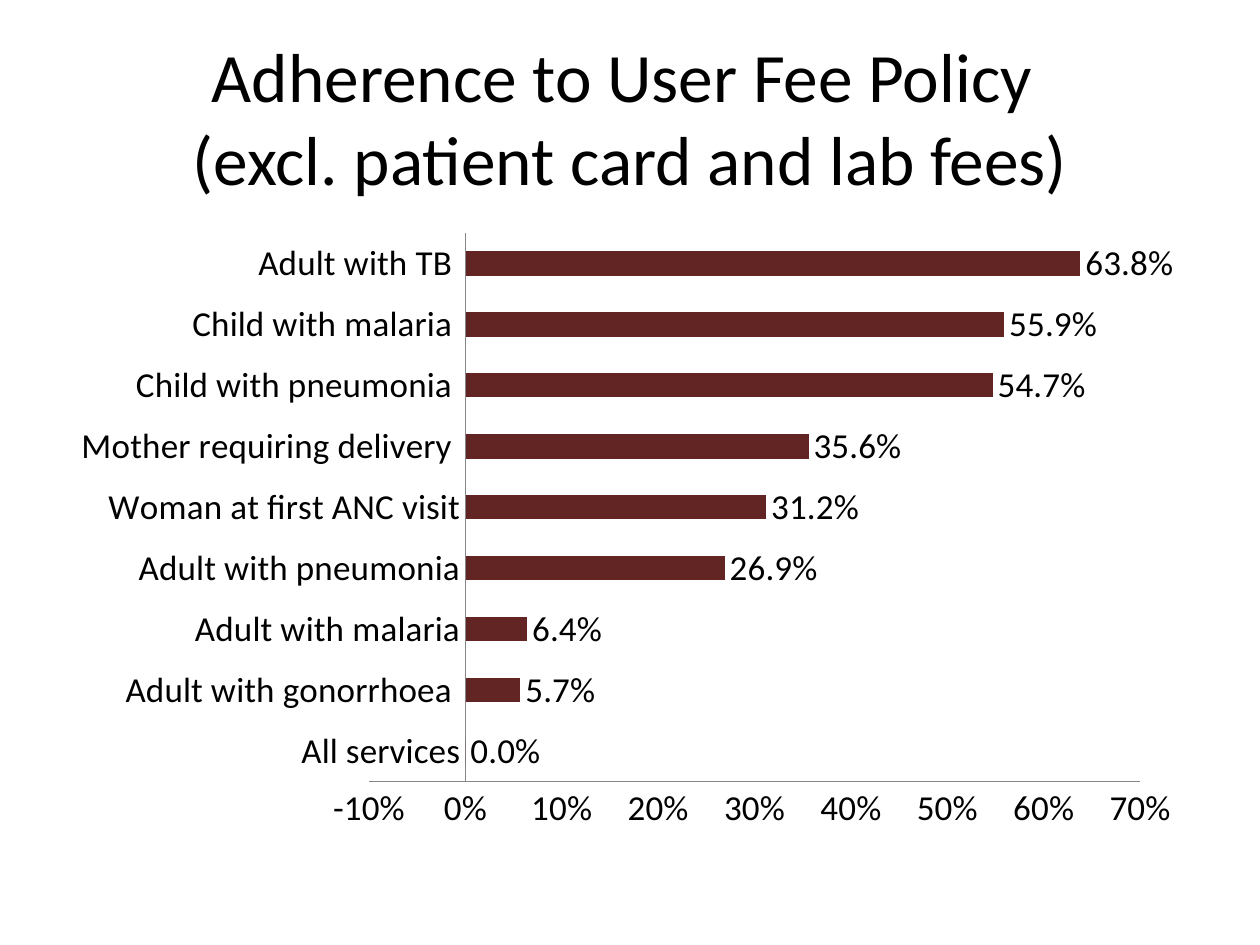
from lxml import etree
from pptx import Presentation
from pptx.chart.data import CategoryChartData
from pptx.dml.color import RGBColor
from pptx.enum.chart import XL_CHART_TYPE as Kind, XL_LABEL_POSITION as Spot
from pptx.enum.chart import XL_TICK_MARK as Tick
from pptx.enum.text import MSO_ANCHOR, MSO_AUTO_SIZE, PP_ALIGN
from pptx.oxml.ns import qn
from pptx.util import Inches, Pt

BLACK = RGBColor(0, 0, 0)
GRAY = RGBColor(0x86, 0x86, 0x86)
MAROON = RGBColor(0x63, 0x25, 0x23)
FACE = "Calibri"

RATES = [
    ("All services", 0),
    ("Adult with gonorrhoea ", 0.057),
    ("Adult with malaria", 0.064),
    ("Adult with pneumonia", 0.269),
    ("Woman at first ANC visit", 0.312),
    ("Mother requiring delivery ", 0.356),
    ("Child with pneumonia ", 0.547),
    ("Child with malaria ", 0.559),
    ("Adult with TB ", 0.638),
]


def set_font(font, size):
    font.name, font.size = FACE, Pt(size)
    font.color.rgb = BLACK


def add_title(slide, left, top, width, height):
    title = slide.shapes.title
    title.left, title.top, title.width, title.height = left, top, width, height
    frame = title.text_frame
    frame.auto_size = MSO_AUTO_SIZE.NONE
    frame.vertical_anchor = MSO_ANCHOR.MIDDLE
    para = frame.paragraphs[0]
    para.text = "Adherence to User Fee Policy \v(excl. patient card and lab fees)"
    para.alignment = PP_ALIGN.CENTER
    set_font(para.font, 39.6)


def style_axis(axis):
    axis.has_major_gridlines = False
    axis.major_tick_mark = axis.minor_tick_mark = Tick.NONE
    axis.format.line.color.rgb = GRAY
    axis.format.line.width = Pt(0.75)
    set_font(axis.tick_labels.font, 20)


def fix_plot(chart, **box):
    """Pin the inner plot area to fractions of the chart."""
    area = chart.plots[0]._element.getparent()
    for old in area.findall(qn("c:layout")):
        area.remove(old)
    layout = etree.Element(qn("c:layout"))
    area.insert(0, layout)
    manual = etree.SubElement(layout, qn("c:manualLayout"))
    parts = dict(layoutTarget="inner", xMode="edge", yMode="edge", **box)
    for name, value in parts.items():
        etree.SubElement(manual, qn("c:" + name)).set("val", str(value))


def add_bars(slide, left, top, width, height):
    data = CategoryChartData()
    data.categories = [name for name, _ in RATES]
    data.add_series("Series 1", [rate for _, rate in RATES])
    chart = slide.shapes.add_chart(
        Kind.BAR_CLUSTERED, left, top, width, height, data).chart
    chart.has_legend = chart.has_title = False
    set_font(chart.font, 12)
    fix_plot(chart, x=0.27, y=0.02, w=0.68, h=0.88)

    style_axis(chart.category_axis)
    scale = chart.value_axis
    style_axis(scale)
    scale.minimum_scale, scale.maximum_scale = -0.1, 0.7
    scale.major_unit = 0.1
    scale.tick_labels.number_format = "0%"
    scale.tick_labels.number_format_is_linked = False

    plot = chart.plots[0]
    plot.gap_width = 150
    plot.vary_by_categories = False
    fill = plot.series[0].format.fill
    fill.solid()
    fill.fore_color.rgb = MAROON
    labels = plot.series[0].data_labels
    labels.show_value = True
    labels.number_format = "0.0%"
    labels.number_format_is_linked = False
    labels.position = Spot.OUTSIDE_END
    set_font(labels.font, 20)


def main():
    deck = Presentation()
    deck.slide_width, deck.slide_height = Inches(10), Inches(7.5)
    slide = deck.slides.add_slide(deck.slide_layouts[5])
    left, width = Inches(0.5), Inches(9)
    add_title(slide, left, Inches(0.3), width, Inches(1.25))
    add_bars(slide, left, Inches(1.75), width, Inches(4.95))
    deck.save("out.pptx")


if __name__ == "__main__":
    main()
